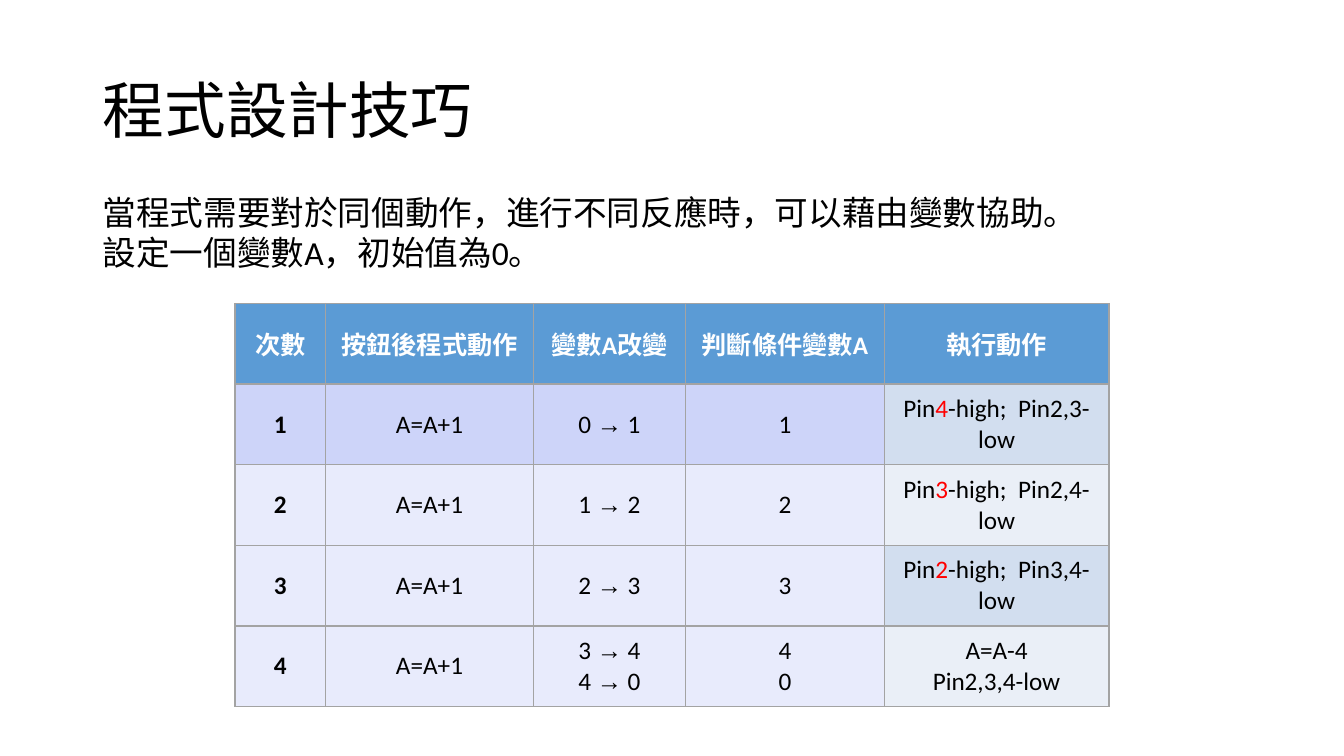
from lxml.etree import SubElement
from pptx import Presentation
from pptx.dml.color import RGBColor
from pptx.enum.text import MSO_ANCHOR as Anchor, MSO_AUTO_SIZE as AutoSize, PP_ALIGN as Align
from pptx.oxml.ns import qn
from pptx.util import Inches, Pt


def color(hex_string):
    return RGBColor.from_string(hex_string)


class Lesson:
    font = "Calibri"
    arrow_font = "Arial"
    ink = "000000"
    accent = "FF0000"
    grid = "A3A3A3"

    def __init__(self, deck):
        self.slide = deck.slides.add_slide(deck.slide_layouts[5])

    def style(self, paragraph, size, ink=ink, bold=False, align=Align.LEFT):
        paragraph.alignment = align
        paragraph.font.name = self.font
        paragraph.font.size = Pt(size)
        paragraph.font.bold = bold
        paragraph.font.color.rgb = color(ink)

    def place(self, shape, left, top, width, height):
        shape.left, shape.top = Inches(left), Inches(top)
        shape.width, shape.height = Inches(width), Inches(height)

    def title(self, text, *box):
        heading = self.slide.shapes.title
        self.place(heading, *box)
        heading.text_frame.text = text
        heading.text_frame.vertical_anchor = Anchor.MIDDLE
        heading.text_frame.auto_size = AutoSize.NONE
        paragraph = heading.text_frame.paragraphs[0]
        paragraph.line_spacing = 0.9
        self.style(paragraph, 44)

    def text(self, lines, *box):
        frame = self.slide.shapes.add_textbox(*map(Inches, box)).text_frame
        frame.word_wrap = True
        frame.auto_size = AutoSize.SHAPE_TO_FIT_TEXT
        frame.text = "\n".join(lines)
        for paragraph in frame.paragraphs:
            self.style(paragraph, 24)

    def borders(self, cell):
        properties = cell._tc.get_or_add_tcPr()
        for side in ("lnL", "lnR", "lnT", "lnB"):
            line = SubElement(properties, qn(f"a:{side}"), w=str(Pt(1)))
            fill = SubElement(line, qn("a:solidFill"))
            SubElement(fill, qn("a:srgbClr"), val=self.grid)

    def cell(self, cell, text, fill, ink, bold):
        cell.margin_left = cell.margin_right = Inches(0.04)
        cell.margin_top = cell.margin_bottom = Inches(0.03)
        cell.vertical_anchor = Anchor.MIDDLE
        self.borders(cell)
        cell.fill.solid()
        cell.fill.fore_color.rgb = color(fill)
        frame = cell.text_frame
        for number, line in enumerate(text.split("\n")):
            paragraph = frame.add_paragraph() if number else frame.paragraphs[0]
            self.style(paragraph, 18, ink, bold, Align.CENTER)
            for position, piece in enumerate(line.split("|")):
                run = paragraph.add_run()
                run.text = piece
                if piece == "→":
                    run.font.name = self.arrow_font
                elif position == 1:
                    run.font.color.rgb = color(self.accent)

    def table(self, rows, fills, widths, left, top, row_height):
        table = self.slide.shapes.add_table(
            len(rows), len(widths), Inches(left), Inches(top),
            Inches(sum(widths)), Inches(row_height * len(rows))).table
        for column, width in zip(table.columns, widths):
            column.width = Inches(width)
        for r, (texts, (fill, action_fill)) in enumerate(zip(rows, fills)):
            table.rows[r].height = Inches(row_height)
            for c, text in enumerate(texts):
                last = c == len(widths) - 1
                self.cell(table.cell(r, c), text, action_fill if last else fill,
                          self.ink if r else "FFFFFF", r == 0 or c == 0)


STEPS = [
    ("次數", "按鈕後程式動作", "變數A改變", "判斷條件變數A", "執行動作"),
    ("1", "A=A+1", "0 |→| 1", "1", "Pin|4|-high;  Pin2,3-low"),
    ("2", "A=A+1", "1 |→| 2", "2", "Pin|3|-high;  Pin2,4-low"),
    ("3", "A=A+1", "2 |→| 3", "3", "Pin|2|-high;  Pin3,4-low"),
    ("4", "A=A+1", "3 |→| 4\n4 |→| 0", "4\n0", "A=A-4\nPin2,3,4-low"),
]
ROW_FILLS = [
    ("5B9BD5", "5B9BD5"),
    ("CDD4F9", "D2DEEF"),
    ("E8EBFC", "EAEFF7"),
    ("E8EBFC", "D2DEEF"),
    ("E8EBFC", "EAEFF7"),
]


def main():
    deck = Presentation()
    deck.slide_width, deck.slide_height = Inches(13.33), Inches(7.5)
    lesson = Lesson(deck)
    lesson.title("程式設計技巧", 0.92, 0.4, 11.5, 1.45)
    lesson.text(["當程式需要對於同個動作，進行不同反應時，可以藉由變數協助。",
                 "設定一個變數A，初始值為0。"], 0.92, 1.85, 10.19, 0.91)
    lesson.table(STEPS, ROW_FILLS, (0.9, 2.06, 1.51, 1.97, 2.23), 2.33, 3.01, 0.8)
    deck.save("out.pptx")


if __name__ == "__main__":
    main()
